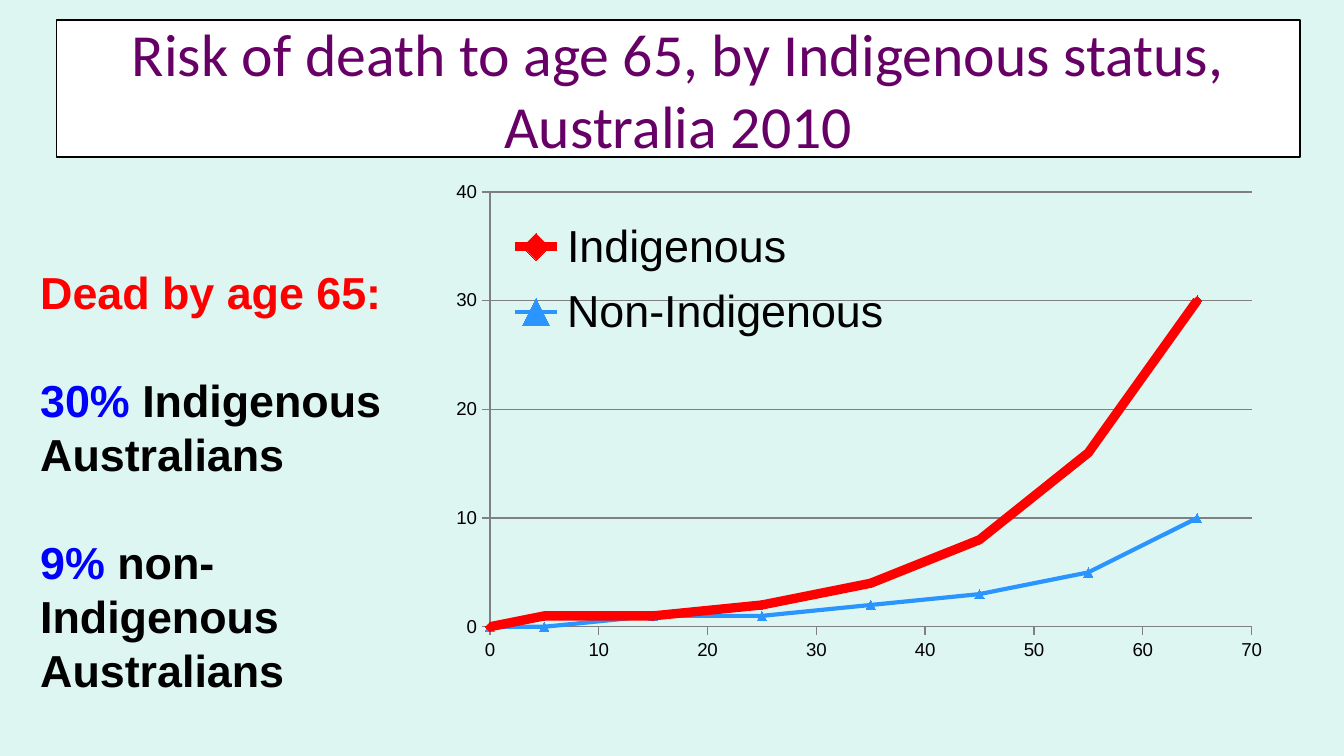
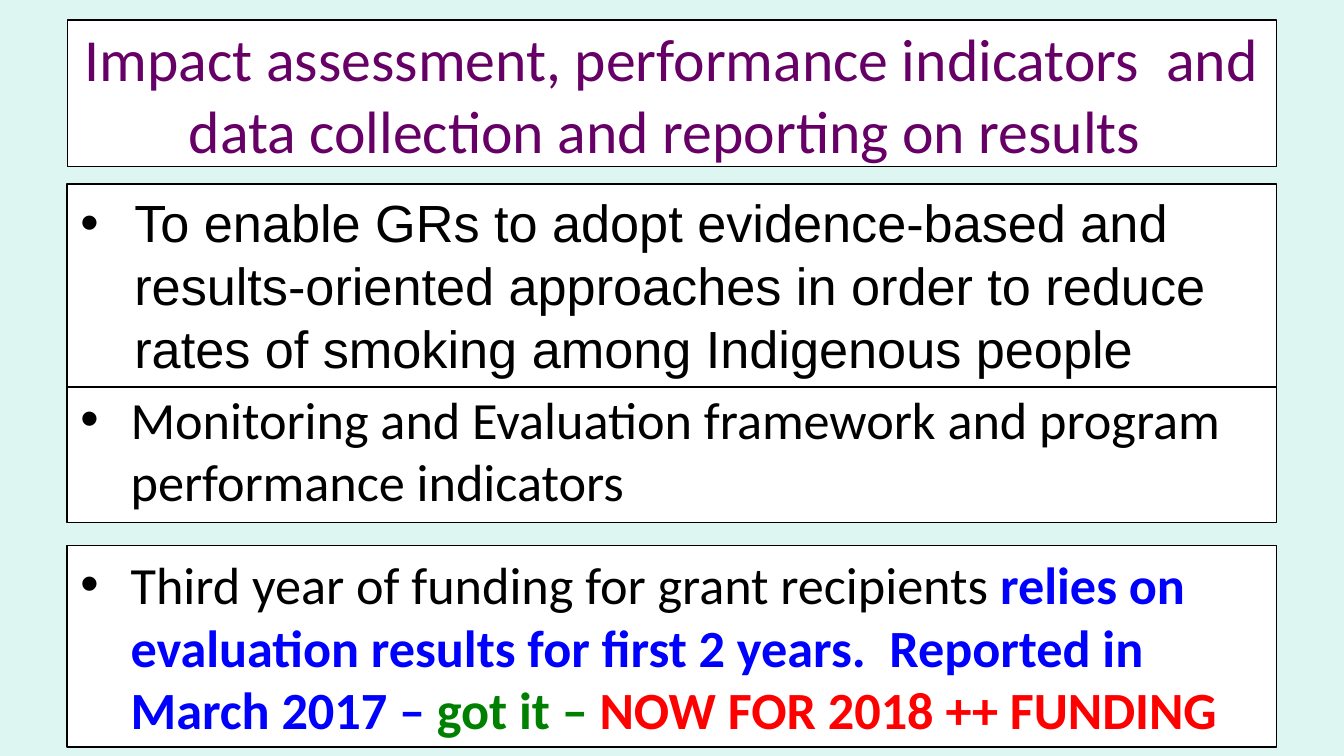
from pptx import Presentation
from pptx.chart.data import XyChartData
from pptx.dml.color import RGBColor
from pptx.enum.chart import XL_CHART_TYPE, XL_LEGEND_POSITION, XL_MARKER_STYLE, XL_TICK_MARK
from pptx.enum.shapes import MSO_SHAPE
from pptx.enum.text import MSO_ANCHOR, PP_ALIGN
from pptx.oxml import parse_xml
from pptx.oxml.ns import nsdecls
from pptx.util import Cm, Pt

SCATTER = XL_CHART_TYPE.XY_SCATTER_LINES
LEGEND_RIGHT = XL_LEGEND_POSITION.RIGHT
DIAMOND, TRIANGLE = XL_MARKER_STYLE.DIAMOND, XL_MARKER_STYLE.TRIANGLE
TICK_OUTSIDE = XL_TICK_MARK.OUTSIDE
RECTANGLE = MSO_SHAPE.RECTANGLE
TOP, MIDDLE = MSO_ANCHOR.TOP, MSO_ANCHOR.MIDDLE
LEFT, CENTER = PP_ALIGN.LEFT, PP_ALIGN.CENTER

MINT, WHITE, BLACK, PURPLE = "DEF6F1", "FFFFFF", "000000", "660066"
RED, BLUE, GREEN, SKY, GRAY = "FF0000", "0000FF", "008000", "2A94FF", "808080"
HEADING_FONT, PLAIN_FONT = "Calibri", "Arial"
TITLE_TOP = 0.38

RISK_TITLE = "Risk of death to age 65, by Indigenous status, Australia 2010"
RISK_TITLE_BOX = (1.07, TITLE_TOP, 23.5, 2.59)
DEATHS_BOX = (0.51, 4.88, 8.2, 8.46)
DEATHS_LINE = 28.9
DEATHS = [
    (0, [("Dead by age 65:", RED)]),
    (DEATHS_LINE, [("30% ", BLUE), ("Indigenous Australians", BLACK)]),
    (DEATHS_LINE, [("9% ", BLUE), ("non-Indigenous", BLACK)]),
    (0, [("Australians", BLACK)]),
]
CHART_BOX = (8.31, 3.25, 15.82, 9.45)
PLOT_LAYOUT = (0.06, 0.04, 0.91, 0.87)
LEGEND_LAYOUT = (0.07, 0.07, 0.48, 0.29)
AGES = [0, 5, 15, 25, 35, 45, 55, 65]
RISKS = [
    ("Indigenous", [0, 1, 1, 2, 4, 8, 16, 30], RED, 5, DIAMOND),
    ("Non-Indigenous", [0, 0, 1, 1, 2, 3, 5, 10], SKY, 2.25, TRIANGLE),
]

IMPACT_TITLE = ("Impact assessment, performance indicators  and "
                "data collection and reporting on results ")
IMPACT_LEFT, IMPACT_WIDTH = 1.27, 22.86
IMPACT_TITLE_BOX = (IMPACT_LEFT, TITLE_TOP, IMPACT_WIDTH, 2.77)
IMPACT_POINTS = [
    (7.19, 2.69, HEADING_FONT, 0.95, [
        ("Monitoring and Evaluation framework and program performance indicators", BLACK, False)]),
    (3.48, 3.84, PLAIN_FONT, 1.02, [
        ("To enable GRs to adopt evidence-based and results-oriented approaches "
         "in order to reduce rates of smoking among Indigenous people", BLACK, False)]),
    (10.31, 3.81, HEADING_FONT, 0.95, [
        ("Third year of funding for grant recipients ", BLACK, False),
        ("relies on evaluation results for first 2 years.  Reported in March 2017 – ", BLUE, True),
        ("got it –", GREEN, True),
        (" NOW FOR 2018 ++ FUNDING", RED, True)]),
]


def color(value):
    return RGBColor.from_string(value)


def lengths(box):
    return [Cm(length) for length in box]


def set_font(font, name, size, value):
    font.name = name
    font.size = Pt(size)
    font.color.rgb = color(value)


def frame_shape(shape):
    shape.fill.solid()
    shape.fill.fore_color.rgb = color(WHITE)
    shape.line.color.rgb = color(BLACK)
    shape.line.width = Pt(0.75)


def add_titled_slide(presentation, text, box):
    slide = presentation.slides.add_slide(presentation.slide_layouts[5])
    title = slide.shapes.title
    title.left, title.top, title.width, title.height = lengths(box)
    frame_shape(title)
    title.text_frame.text = text
    title.text_frame.vertical_anchor = MIDDLE
    paragraph = title.text_frame.paragraphs[0]
    paragraph.alignment = CENTER
    set_font(paragraph.font, HEADING_FONT, 32, PURPLE)
    return slide


def add_run(paragraph, text, value, bold):
    run = paragraph.add_run()
    run.text = text
    run.font.color.rgb = color(value)
    run.font.bold = bold


def add_deaths(slide):
    frame = slide.shapes.add_textbox(*lengths(DEATHS_BOX)).text_frame
    frame.word_wrap = True
    for index, (gap, runs) in enumerate(DEATHS):
        paragraph = frame.add_paragraph() if index else frame.paragraphs[0]
        paragraph.space_before = Pt(gap)
        paragraph.line_spacing = Pt(DEATHS_LINE)
        paragraph.font.name = PLAIN_FONT
        paragraph.font.size = Pt(24)
        for text, value in runs:
            add_run(paragraph, text, value, True)


def manual_layout(box, inner=False):
    target = '<c:layoutTarget val="inner"/>' if inner else ""
    modes = "".join(f'<c:{key}Mode val="edge"/>' for key in "xy")
    sizes = "".join(f'<c:{key} val="{value}"/>' for key, value in zip("xywh", box))
    return parse_xml(f'<c:layout {nsdecls("c")}><c:manualLayout>{target}{modes}{sizes}'
                     '</c:manualLayout></c:layout>')


def format_axis(axis, maximum):
    axis.minimum_scale, axis.maximum_scale, axis.major_unit = 0, maximum, 10
    axis.major_tick_mark = TICK_OUTSIDE
    axis.format.line.color.rgb = color(GRAY)


def add_risk_chart(slide):
    data = XyChartData()
    for name, values, *_ in RISKS:
        series = data.add_series(name)
        for age, value in zip(AGES, values):
            series.add_data_point(age, value)
    chart = slide.shapes.add_chart(SCATTER, *lengths(CHART_BOX), data).chart
    set_font(chart.font, PLAIN_FONT, 10, BLACK)
    chart.has_title = False
    format_axis(chart.category_axis, 70)
    format_axis(chart.value_axis, 40)
    chart.category_axis.has_major_gridlines = False
    chart.value_axis.has_major_gridlines = True
    chart.value_axis.major_gridlines.format.line.color.rgb = color(GRAY)

    chart.plots[0].vary_by_categories = False
    for series, (_, _, value, width, marker) in zip(chart.plots[0].series, RISKS):
        series.smooth = False
        series.format.line.color.rgb = color(value)
        series.format.line.width = Pt(width)
        series.marker.style = marker
        series.marker.size = 5
        series.marker.format.fill.solid()
        series.marker.format.fill.fore_color.rgb = color(value)
        series.marker.format.line.color.rgb = color(value)

    chart.has_legend = True
    chart.legend.position = LEGEND_RIGHT
    chart.legend.include_in_layout = True
    set_font(chart.legend.font, PLAIN_FONT, 24, BLACK)
    chart_space = chart.element if hasattr(chart, "element") else chart._chartSpace
    plot_area = chart_space.xpath("c:chart/c:plotArea")[0]
    for layout in chart_space.xpath("c:chart/c:plotArea/c:layout | c:chart/c:legend/c:layout"):
        layout.getparent().remove(layout)
    plot_area.insert(0, manual_layout(PLOT_LAYOUT, inner=True))
    chart_space.xpath("c:chart/c:legend/c:legendPos")[0].addnext(manual_layout(LEGEND_LAYOUT))


def add_impact_point(slide, top, height, font_name, indent, runs):
    shape = slide.shapes.add_shape(RECTANGLE, *lengths((IMPACT_LEFT, top, IMPACT_WIDTH, height)))
    shape.shadow.inherit = False
    frame_shape(shape)
    frame = shape.text_frame
    frame.word_wrap = True
    frame.vertical_anchor = TOP
    paragraph = frame.paragraphs[0]
    paragraph.alignment = LEFT
    set_font(paragraph.font, font_name, 28, BLACK)
    for run in runs:
        add_run(paragraph, *run)
    properties = paragraph._p.get_or_add_pPr()
    properties.set("marL", str(Cm(indent)))
    properties.set("indent", str(-Cm(indent)))
    bullet_font = parse_xml(f'<a:buFont {nsdecls("a")} typeface="{PLAIN_FONT}"/>')
    bullet = parse_xml(f'<a:buChar {nsdecls("a")} char="•"/>')
    properties.insert(0, bullet_font)
    bullet_font.addnext(bullet)


def main():
    """Build the mortality and impact assessment slides."""
    presentation = Presentation()
    presentation.slide_width, presentation.slide_height = lengths((25.4, 14.29))
    background = presentation.slide_master.background.fill
    background.solid()
    background.fore_color.rgb = color(MINT)

    risk_slide = add_titled_slide(presentation, RISK_TITLE, RISK_TITLE_BOX)
    add_deaths(risk_slide)
    add_risk_chart(risk_slide)

    impact_slide = add_titled_slide(presentation, IMPACT_TITLE, IMPACT_TITLE_BOX)
    for point in IMPACT_POINTS:
        add_impact_point(impact_slide, *point)
    presentation.save("out.pptx")


if __name__ == "__main__":
    main()
